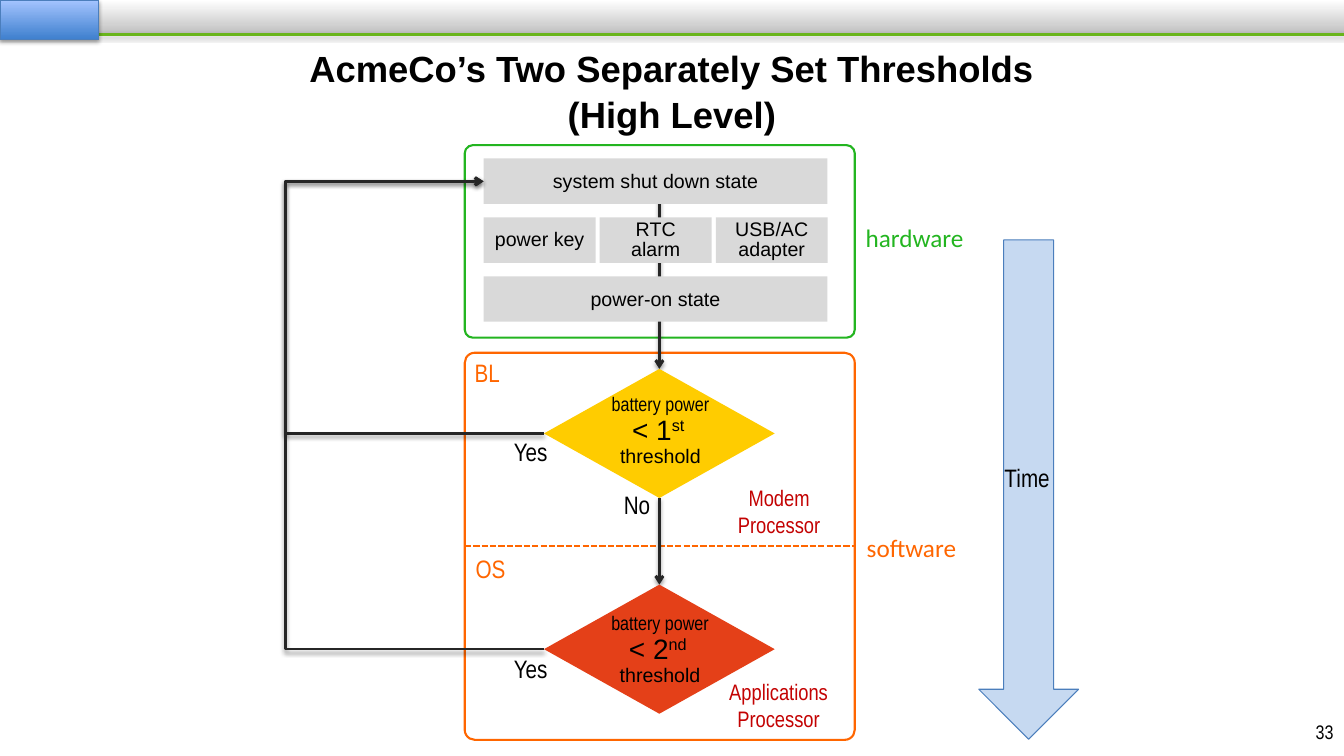
from dataclasses import dataclass
from typing import Any

from lxml import etree
from pptx import Presentation
from pptx.dml.color import RGBColor
from pptx.enum import dml, shapes, text
from pptx.oxml import ns
from pptx.util import Pt

BLACK, DARK, GREY = "000000", "262626", "D9D9D9"
GREEN, ORANGE, RED = "23B520", "FF6600", "C30202"
NARROW = "Arial Narrow"
LEFT, CENTER, RIGHT = text.PP_ALIGN.LEFT, text.PP_ALIGN.CENTER, text.PP_ALIGN.RIGHT
KIND = shapes.MSO_SHAPE

CENTER_X = 471
PANEL_LEFT, PANEL_WIDTH = 332, 278.6
BAR_LEFT, BAR_WIDTH, BAR_HEIGHT = 345.5, 245.6, 32.4
BAR_TOP, BAR_PITCH = 113.2, 42.1
KEY_WIDTH, KEY_PITCH = 80, 82.9
DIAMOND_LEFT, DIAMOND_WIDTH, DIAMOND_HEIGHT = 388.6, 164.8, 92.2
RETURN_X, RETURN_Y = 203.8, 129.6


@dataclass
class Run:
    text: str
    size: float = 14
    font: str = "Arial"
    raised: bool = False


@dataclass
class Label:
    text: str
    left: float
    top: float
    width: float
    height: float
    color: str = BLACK
    font: str = NARROW
    size: float = 18
    wrap: bool = False
    align: Any = LEFT


@dataclass
class Decision:
    top: float
    color: str
    number: str
    suffix: str
    text_left: float
    text_top: float


LABELS = [
    Label("hardware", 611.3, 155.5, 85, 28.8, GREEN, "Calibri"),
    Label("software", 612, 376.6, 79.2, 28.8, ORANGE, "Calibri"),
    Label("BL", 332, 252, 33, 28.8, ORANGE),
    Label("OS", 332.6, 391.7, 36, 28.8, ORANGE),
    Label("No", 438.5, 346.3, 33.8, 28.8),
    Label("Yes", 360, 308.2, 38.9, 28.8),
    Label("Yes", 360, 463, 38.9, 28.8),
    Label("Modem Processor", 497.5, 342, 118, 46, RED, size=16, wrap=True, align=CENTER),
    Label("Applications Processor", 503.3, 481, 105.8, 46, RED, size=16, wrap=True, align=CENTER),
    Label("Time", 703.4, 326.9, 60.5, 28.8, wrap=True, align=CENTER),
]
DECISIONS = [
    Decision(263.5, "FFCC00", "< 1", "st ", 402.3, 278.6),
    Decision(417.6, "E44018", "< 2", "nd ", 402, 434.9),
]


def rgb(color: str) -> RGBColor:
    return RGBColor.from_string(color)


def write(frame, paragraphs: list, *, color=BLACK, align=CENTER, bold=False,
          spacing=None, anchor=text.MSO_ANCHOR.MIDDLE, wrap=True) -> None:
    """Fill a text frame; each paragraph is a list of runs."""
    frame.word_wrap = wrap
    frame.vertical_anchor = anchor
    for index, runs in enumerate(paragraphs):
        paragraph = frame.paragraphs[0] if index == 0 else frame.add_paragraph()
        paragraph.alignment = align
        if spacing:
            paragraph.line_spacing = spacing
        for item in runs:
            if item.text == "\v":
                paragraph.add_line_break()
                continue
            run = paragraph.add_run()
            run.text = item.text
            run.font.size, run.font.name = Pt(item.size), item.font
            run.font.bold = bold
            run.font.color.rgb = rgb(color)
            if item.raised:
                run._r.get_or_add_rPr().set("baseline", "30000")


def set_effects(shape, shadow: bool, opacity: int = 38) -> None:
    """Replace inherited effects by none or by a soft shadow below."""
    properties = shape._element.spPr
    for old in properties.findall(ns.qn("a:effectLst")):
        properties.remove(old)
    effects = etree.SubElement(properties, ns.qn("a:effectLst"))
    if shadow:
        outer = etree.SubElement(effects, ns.qn("a:outerShdw"), blurRad=str(Pt(3.1)),
                                 dist=str(Pt(1.6)), dir="5400000", rotWithShape="0")
        tint = etree.SubElement(outer, ns.qn("a:srgbClr"), val=BLACK)
        etree.SubElement(tint, ns.qn("a:alpha"), val=str(opacity * 1000))


def add_box(slide, kind, left: float, top: float, width: float, height: float, *,
            fill=None, gradient=None, line=None, weight=1.5, radius=None):
    shape = slide.shapes.add_shape(kind, Pt(left), Pt(top), Pt(width), Pt(height))
    shape.shadow.inherit = False
    if radius is not None:
        shape.adjustments[0] = radius
    if gradient:
        shape.fill.gradient()
        shape.fill.gradient_angle = 270
        for stop, color in zip(shape.fill.gradient_stops, gradient):
            stop.color.rgb = rgb(color)
    elif fill:
        shape.fill.solid()
        shape.fill.fore_color.rgb = rgb(fill)
    else:
        shape.fill.background()
    if line:
        shape.line.color.rgb = rgb(line)
        shape.line.width = Pt(weight)
    else:
        shape.line.fill.background()
    return shape


def add_line(slide, x1: float, y1: float, x2: float, y2: float, *, color=DARK, weight=2,
             arrow=True, shadow=True, dashed=False, via_x=None) -> None:
    """Draw a straight line, or an elbow turning at via_x."""
    kind = shapes.MSO_CONNECTOR.STRAIGHT if via_x is None else shapes.MSO_CONNECTOR.ELBOW
    connector = slide.shapes.add_connector(kind, Pt(x1), Pt(y1), Pt(x2), Pt(y2))
    connector.line.color.rgb = rgb(color)
    connector.line.width = Pt(weight)
    if dashed:
        connector.line.dash_style = dml.MSO_LINE.SQUARE_DOT
    if arrow:
        etree.SubElement(connector.line._get_or_add_ln(), ns.qn("a:tailEnd"), type="arrow")
    if via_x is not None:
        guides = connector._element.spPr.find(ns.qn("a:prstGeom")).get_or_add_avLst()
        ratio = round((via_x - x1) / (x2 - x1) * 100000)
        etree.SubElement(guides, ns.qn("a:gd"), name="adj1", fmla=f"val {ratio}")
    set_effects(connector, shadow)


def add_text(slide, left: float, top: float, width: float, height: float, paragraphs: list, **style) -> None:
    box = slide.shapes.add_textbox(Pt(left), Pt(top), Pt(width), Pt(height))
    write(box.text_frame, paragraphs, **style)


def add_hardware(slide) -> None:
    for row, name in ((0, "system shut down state"), (2, "power-on state")):
        bar = add_box(slide, KIND.RECTANGLE, BAR_LEFT, BAR_TOP + row * BAR_PITCH,
                      BAR_WIDTH, BAR_HEIGHT, fill=GREY)
        write(bar.text_frame, [[Run(name)]])
    for column, lines in enumerate((["power key"], ["RTC alarm"], ["USB/AC", "adapter"])):
        key = add_box(slide, KIND.RECTANGLE, BAR_LEFT + column * KEY_PITCH, BAR_TOP + BAR_PITCH,
                      KEY_WIDTH, BAR_HEIGHT, fill=GREY)
        write(key.text_frame, [[Run(line)] for line in lines], spacing=0.85)


def add_decision(slide, decision: Decision) -> None:
    add_box(slide, KIND.DIAMOND, DIAMOND_LEFT, decision.top, DIAMOND_WIDTH, DIAMOND_HEIGHT,
            fill=decision.color)
    condition = [Run(decision.number, 20), Run(decision.suffix, 20, raised=True)]
    add_text(slide, decision.text_left, decision.text_top, 139, 74.9,
             [[Run("battery power", font=NARROW)], condition, [Run("threshold")]],
             spacing=0.9, anchor=text.MSO_ANCHOR.TOP)
    add_line(slide, DIAMOND_LEFT, decision.top + DIAMOND_HEIGHT / 2, BAR_LEFT, RETURN_Y, via_x=RETURN_X)


def main() -> None:
    presentation = Presentation()
    presentation.slide_width, presentation.slide_height = Pt(960), Pt(540)
    slide = presentation.slides.add_slide(presentation.slide_layouts[5])

    add_box(slide, KIND.RECTANGLE, 0, 0, 960, 24.5, gradient=("FFFFFF", "BFBFBF"))
    add_line(slide, 960, 24.5, 0, 24.5, color="69B51B", arrow=False)
    corner = add_box(slide, KIND.RECTANGLE, 0, 0, 70.6, 28.1,
                     gradient=("A4C4FF", "3F80CE"), line="4B7EBC", weight=0.75)
    set_effects(corner, True, 35)

    title = slide.shapes.title
    title.left, title.top, title.width, title.height = Pt(48), Pt(28), Pt(864), Pt(44.6)
    title.text_frame.auto_size = text.MSO_AUTO_SIZE.NONE
    write(title.text_frame, [[Run("AcmeCo’s Two Separately Set Thresholds", 26), Run("\v"),
                              Run("(High Level)", 26)]],
          bold=True, spacing=1.05, anchor=text.MSO_ANCHOR.TOP)

    add_box(slide, KIND.ROUNDED_RECTANGLE, PANEL_LEFT, 252, PANEL_WIDTH, 276.5, line=ORANGE, radius=0.026)
    add_box(slide, KIND.ROUNDED_RECTANGLE, PANEL_LEFT, 103.7, PANEL_WIDTH, 137.5, line=GREEN, radius=0.042)
    add_line(slide, CENTER_X, 134, CENTER_X, DECISIONS[0].top)
    add_hardware(slide)
    add_line(slide, PANEL_LEFT, 390.2, PANEL_LEFT + PANEL_WIDTH, 390.2, color=ORANGE, weight=1.5,
             arrow=False, shadow=False, dashed=True)
    add_line(slide, CENTER_X, DECISIONS[0].top + DIAMOND_HEIGHT, CENTER_X, DECISIONS[1].top)
    for decision in DECISIONS:
        add_decision(slide, decision)

    add_box(slide, KIND.DOWN_ARROW, 699.1, 171.4, 71.3, 356.6, fill="C6D9F1", line="4B7EBC", weight=0.75)
    for label in LABELS:
        add_text(slide, label.left, label.top, label.width, label.height,
                 [[Run(label.text, label.size, label.font)]], color=label.color,
                 align=label.align, wrap=label.wrap, anchor=text.MSO_ANCHOR.TOP)
    add_text(slide, 890.6, 504, 69.1, 36.7, [[Run("33", font=NARROW)]], align=RIGHT)

    presentation.save("out.pptx")


if __name__ == "__main__":
    main()
